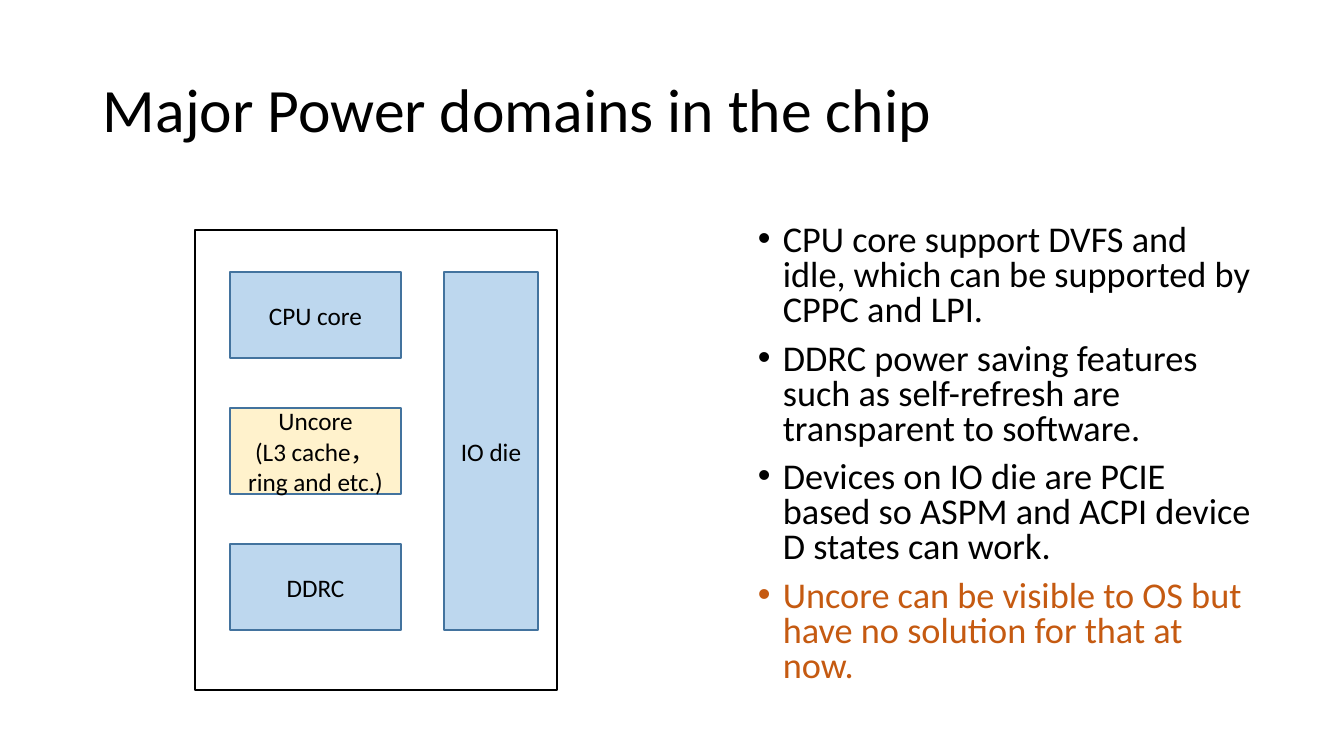
from lxml import etree
from pptx import Presentation
from pptx.dml.color import RGBColor
from pptx.enum.shapes import MSO_SHAPE
from pptx.enum.text import MSO_ANCHOR, PP_ALIGN
from pptx.oxml.ns import qn
from pptx.util import Pt

RECTANGLE = MSO_SHAPE.RECTANGLE
MIDDLE, TOP = MSO_ANCHOR.MIDDLE, MSO_ANCHOR.TOP
CENTER, LEFT = PP_ALIGN.CENTER, PP_ALIGN.LEFT

BLACK = RGBColor(0x00, 0x00, 0x00)
WHITE = RGBColor(0xFF, 0xFF, 0xFF)
BLUE = RGBColor(0xBD, 0xD7, 0xEE)
CREAM = RGBColor(0xFF, 0xF2, 0xCC)
EDGE = RGBColor(0x43, 0x73, 0x9E)
ORANGE = RGBColor(0xC5, 0x5A, 0x11)
FONT = "Calibri"

TITLE = "Major Power domains in the chip"
NOTES = [
    ("CPU core support DVFS and idle, which can be supported by CPPC and LPI.", BLACK),
    ("DDRC power saving features such as self-refresh are transparent to software.", BLACK),
    ("Devices on IO die are PCIE based so ASPM and ACPI device D states can work.", BLACK),
    ("Uncore can be visible to OS but have no solution for that at now.", ORANGE),
]
DOMAINS = [
    (["CPU core"], BLUE),
    (["Uncore", "(L3 cache，ring and etc.)"], CREAM),
    (["DDRC"], BLUE),
]
IO_DIE = ["IO die"]

# Lengths in px
SLIDE_WIDTH, SLIDE_HEIGHT = 1344, 756
EMU_PER_PX = 12192000 / SLIDE_WIDTH
TITLE_AREA = (93, 40, 1159, 146)
NOTES_AREA = (748, 220, 514, 480)
CHIP_AREA = (195, 230, 362, 460)
DOMAIN_LEFT, DOMAIN_TOP = 230, 272
DOMAIN_WIDTH, DOMAIN_HEIGHT = 171, 86
DOMAIN_STEP = 136
IO_LEFT, IO_WIDTH = 444, 94
BULLET_INDENT = 25


def emu(px):
    return round(px * EMU_PER_PX)


def write(shape, lines, size, color, align, anchor):
    """Fill a shape with one paragraph per line and return the paragraphs."""
    frame = shape.text_frame
    frame.word_wrap = True
    frame.vertical_anchor = anchor
    frame.text = "\n".join(lines)
    for para in frame.paragraphs:
        para.alignment = align
        para.font.name = FONT
        para.font.size = Pt(size)
        para.font.color.rgb = color
    return frame.paragraphs


def add_text(slide, area, lines, size, anchor):
    box = slide.shapes.add_textbox(*map(emu, area))
    return write(box, lines, size, BLACK, LEFT, anchor)


def add_block(slide, area, fill, edge, lines=()):
    block = slide.shapes.add_shape(RECTANGLE, *map(emu, area))
    block.shadow.inherit = False
    block.fill.solid()
    block.fill.fore_color.rgb = fill
    block.line.color.rgb = edge
    block.line.width = Pt(1)
    if lines:
        write(block, lines, 18, BLACK, CENTER, MIDDLE)


def add_bullet(para):
    properties = para._p.get_or_add_pPr()
    properties.set("marL", str(emu(BULLET_INDENT)))
    properties.set("indent", str(-emu(BULLET_INDENT)))
    bullet_font = etree.Element(qn("a:buFont"), typeface="Arial")
    bullet = etree.Element(qn("a:buChar"), char="•")
    defaults = properties.find(qn("a:defRPr"))
    defaults.addprevious(bullet_font)
    defaults.addprevious(bullet)


def main():
    deck = Presentation()
    deck.slide_width, deck.slide_height = emu(SLIDE_WIDTH), emu(SLIDE_HEIGHT)
    slide = deck.slides.add_slide(deck.slide_layouts[6])

    add_text(slide, TITLE_AREA, [TITLE], 44, MIDDLE)[0].line_spacing = 0.9

    texts = [text for text, _ in NOTES]
    paras = add_text(slide, NOTES_AREA, texts, 25.9, TOP)
    for para, (_, color) in zip(paras, NOTES):
        para.line_spacing = 0.8
        para.space_before = Pt(10)
        para.font.color.rgb = color
        # The bullet takes its colour from the first run
        para.runs[0].font.color.rgb = color
        add_bullet(para)

    add_block(slide, CHIP_AREA, WHITE, BLACK)
    for row, (lines, fill) in enumerate(DOMAINS):
        top = DOMAIN_TOP + row * DOMAIN_STEP
        add_block(slide, (DOMAIN_LEFT, top, DOMAIN_WIDTH, DOMAIN_HEIGHT), fill, EDGE, lines)
    io_height = (len(DOMAINS) - 1) * DOMAIN_STEP + DOMAIN_HEIGHT
    add_block(slide, (IO_LEFT, DOMAIN_TOP, IO_WIDTH, io_height), BLUE, EDGE, IO_DIE)

    deck.save("out.pptx")


if __name__ == "__main__":
    main()
